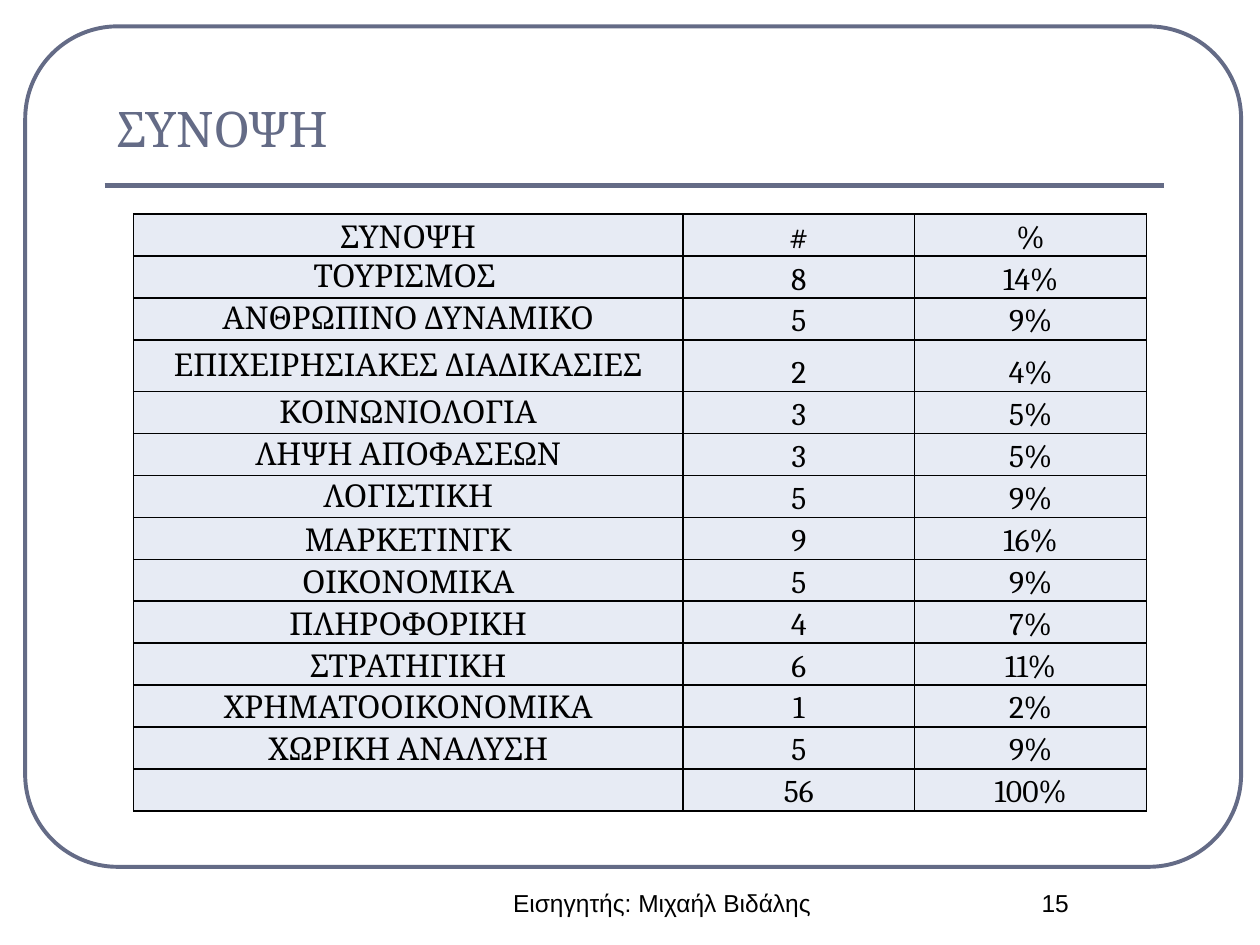
from lxml import etree
from pptx import Presentation
from pptx.dml.color import RGBColor
from pptx.enum.shapes import MSO_CONNECTOR, MSO_SHAPE
from pptx.enum.text import MSO_ANCHOR, PP_ALIGN
from pptx.oxml import parse_xml
from pptx.oxml.ns import nsdecls, qn
from pptx.util import Inches, Pt

LEFT, CENTER = PP_ALIGN.LEFT, PP_ALIGN.CENTER
TOP, MIDDLE, BOTTOM = MSO_ANCHOR.TOP, MSO_ANCHOR.MIDDLE, MSO_ANCHOR.BOTTOM
SLATE = RGBColor(0x64, 0x6B, 0x86)
BLACK = RGBColor(0x00, 0x00, 0x00)
PALE = RGBColor(0xE7, 0xEB, 0xF4)

# Content
TITLE = "ΣΥΝΟΨΗ"
FOOTER = "Εισηγητής: Μιχαήλ Βιδάλης"
PAGE = "15"
ROWS = [
    ("ΣΥΝΟΨΗ", "#", "%"),
    ("ΤΟΥΡΙΣΜΟΣ ", "8", "14%"),
    ("ΑΝΘΡΩΠΙΝΟ ΔΥΝΑΜΙΚΟ", "5", "9%"),
    ("ΕΠΙΧΕΙΡΗΣΙΑΚΕΣ ΔΙΑΔΙΚΑΣΙΕΣ", "2", "4%"),
    ("ΚΟΙΝΩΝΙΟΛΟΓΙΑ", "3", "5%"),
    ("ΛΗΨΗ ΑΠΟΦΑΣΕΩΝ", "3", "5%"),
    ("ΛΟΓΙΣΤΙΚΗ", "5", "9%"),
    ("ΜΑΡΚΕΤΙΝΓΚ", "9", "16%"),
    ("ΟΙΚΟΝΟΜΙΚΑ", "5", "9%"),
    ("ΠΛΗΡΟΦΟΡΙΚΗ", "4", "7%"),
    ("ΣΤΡΑΤΗΓΙΚΗ", "6", "11%"),
    ("ΧΡΗΜΑΤΟΟΙΚΟΝΟΜΙΚΑ", "1", "2%"),
    ("ΧΩΡΙΚΗ ΑΝΑΛΥΣΗ", "5", "9%"),
    ("", "56", "100%"),
]
COL_WIDTHS = (4.36, 1.84, 1.84)
ROW_HEIGHT, TALL_ROW, TALL_HEIGHT = 0.333, 3, 0.41
MIDDLE_ROWS = range(1, 7)  # first-column labels centred vertically


def write(tf, text, size=18, font="Cambria", color=BLACK, align=CENTER):
    p = tf.paragraphs[0]
    p.alignment = align
    target = p
    if text:
        target = p.add_run()
        target.text = text
    target.font.size = Pt(size)
    target.font.name = font
    target.font.color.rgb = color


def add_text(s, text, box, anchor=TOP, **fmt):
    tf = s.shapes.add_textbox(*map(Inches, box)).text_frame
    tf.word_wrap = True
    tf.vertical_anchor = anchor
    write(tf, text, **fmt)


def add_borders(cell):
    tc_pr = cell._tc.get_or_add_tcPr()
    for side in ("lnL", "lnR", "lnT", "lnB"):
        tc_pr.append(parse_xml(
            f'<a:{side} {nsdecls("a")} w="{Pt(1)}"><a:solidFill>'
            f'<a:srgbClr val="{BLACK}"/></a:solidFill></a:{side}>'))


prs = Presentation()
prs.slide_width, prs.slide_height = Inches(10), Inches(7.5)
s = prs.slides.add_slide(prs.slide_layouts[6])

# Rounded frame
frame = s.shapes.add_shape(MSO_SHAPE.ROUNDED_RECTANGLE, Inches(0.2), Inches(0.21),
                           Inches(9.65), Inches(6.67))
frame.adjustments[0] = 0.11
frame.shadow.inherit = False
frame.fill.background()
frame.line.color.rgb = SLATE
frame.line.width = Pt(2.25)

# Rule under the title
rule = s.shapes.add_connector(MSO_CONNECTOR.STRAIGHT, Inches(0.83), Inches(1.47),
                              Inches(9.24), Inches(1.47))
rule.line.color.rgb = SLATE
rule.line.width = Pt(3)
etree.SubElement(rule._element.spPr, qn("a:effectLst"))

# Title and footer
add_text(s, TITLE, (0.83, 0.36, 8.42, 0.94), anchor=BOTTOM, size=28, color=SLATE, align=LEFT)
add_text(s, FOOTER, (3.67, 7, 3.17, 0.5), size=14, font="Arial")
add_text(s, PAGE, (7.5, 7, 1.75, 0.5), size=14, font="Arial")

# Summary table
heights = [TALL_HEIGHT if i == TALL_ROW else ROW_HEIGHT for i in range(len(ROWS))]
table = s.shapes.add_table(len(ROWS), len(COL_WIDTHS), Inches(1.06), Inches(1.7),
                           Inches(sum(COL_WIDTHS)), Inches(sum(heights))).table
for col, width in zip(table.columns, COL_WIDTHS):
    col.width = Inches(width)
for i, (values, height) in enumerate(zip(ROWS, heights)):
    table.rows[i].height = Inches(height)
    for j, value in enumerate(values):
        cell = table.cell(i, j)
        cell.margin_left = cell.margin_right = cell.margin_top = Inches(0.01)
        cell.margin_bottom = 0
        cell.vertical_anchor = MIDDLE if j == 0 and i in MIDDLE_ROWS else BOTTOM
        add_borders(cell)
        cell.fill.solid()
        cell.fill.fore_color.rgb = PALE
        write(cell.text_frame, value)

prs.save("out.pptx")
